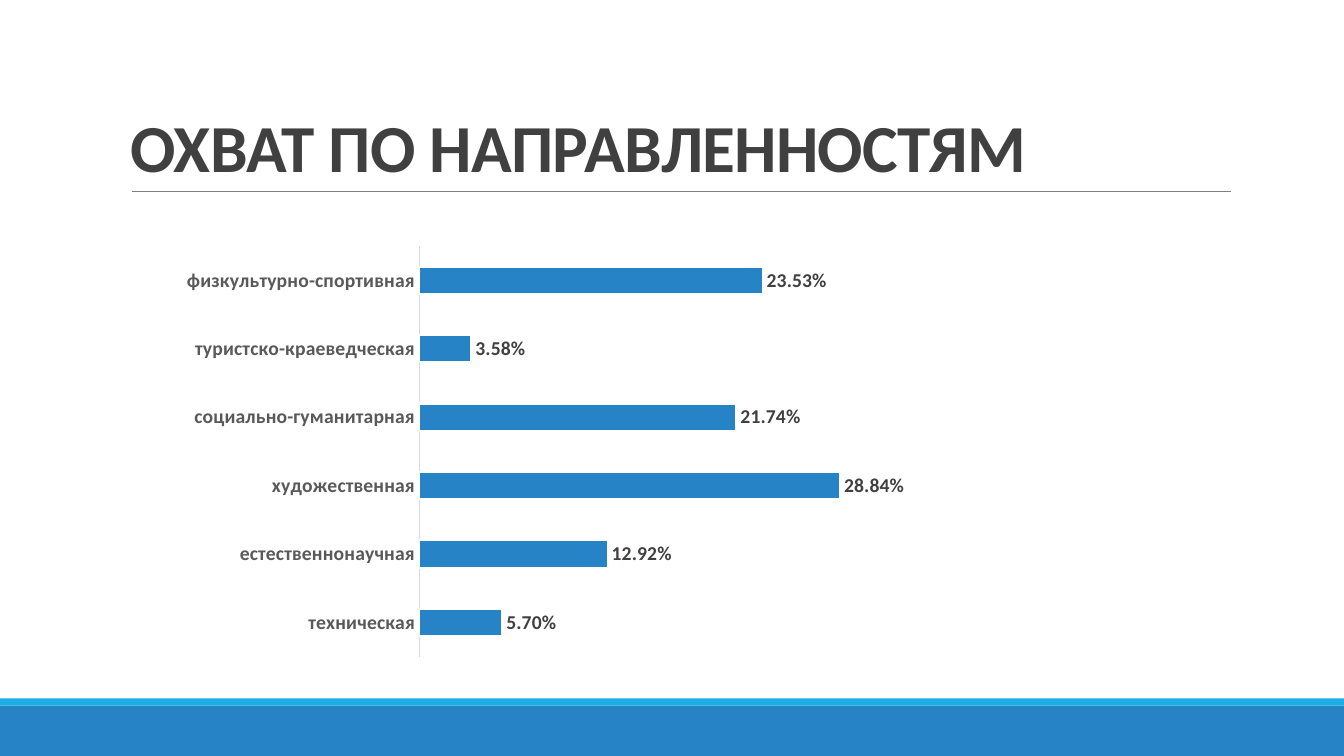
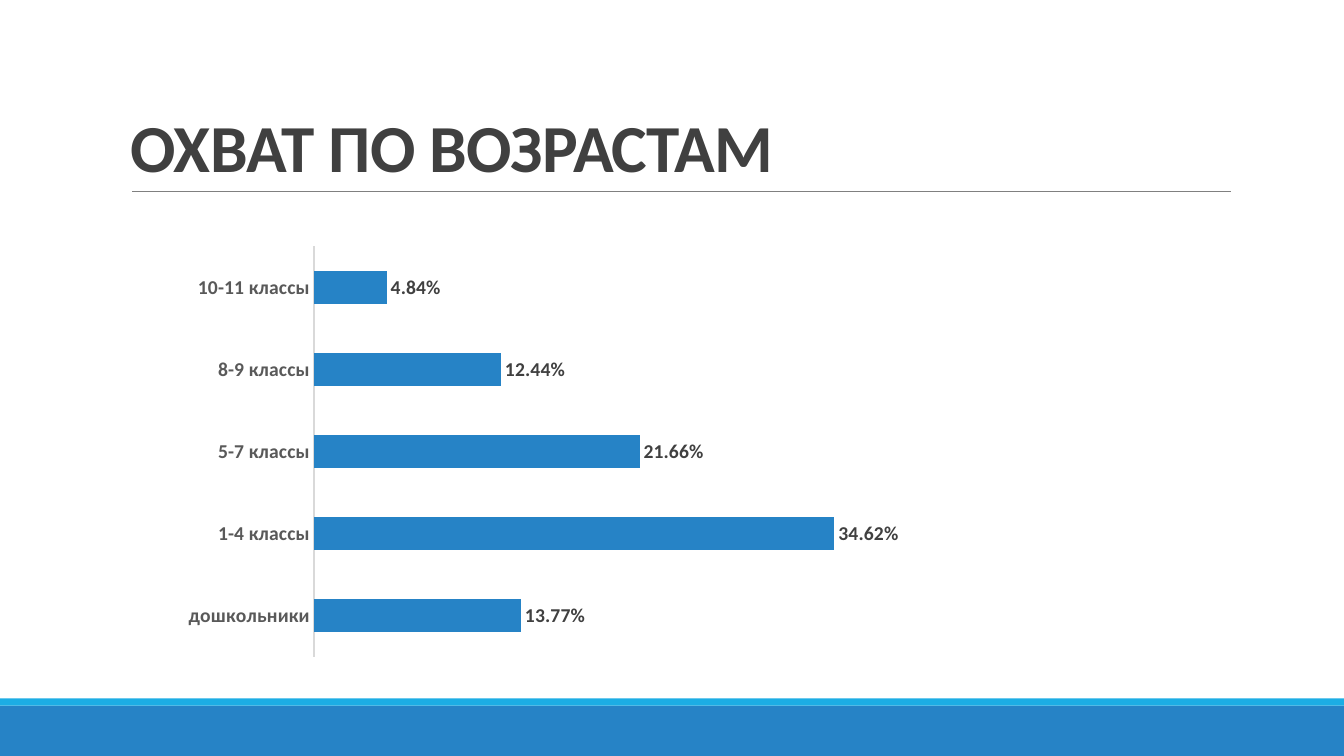
from pptx import Presentation, util as u
from pptx.chart.data import CategoryChartData
from pptx.dml.color import RGBColor
from pptx.enum import chart as charts, shapes, text
from pptx.oxml.ns import qn
from lxml import etree

Cm, Pt = u.Cm, u.Pt
WIDTH, HEIGHT = 33.87, 19.05
FONT = "Calibri"
PERCENT = "0.00%"
COLORS = {
    "bar": "2683C6",
    "stripe": "1CADE4",
    "rule": "808080",
    "dark": "404040",
    "label": "595959",
    "axis": "D9D9D9",
    "white": "FFFFFF",
}


def color(name):
    return RGBColor.from_string(COLORS[name])


class Deck:
    """Holds the shared style and the current slide."""

    def __init__(self):
        self.deck = Presentation()
        self.deck.slide_width, self.deck.slide_height = Cm(WIDTH), Cm(HEIGHT)
        self.page = None

    def new_page(self, title):
        self.page = self.deck.slides.add_slide(self.deck.slide_layouts[6])
        self.band(17.78, 1.27, "bar")
        self.band(17.6, 0.18, "stripe")
        self.rule(3.33, 31.01, 4.83)
        self.title(title)

    def style_font(self, font, size, name):
        font.name, font.size, font.bold = FONT, Pt(size), True
        font.color.rgb = color(name)

    def band(self, top, height, name):
        band = self.page.shapes.add_shape(
            shapes.MSO_SHAPE.RECTANGLE, 0, Cm(top), Cm(WIDTH), Cm(height))
        band.shadow.inherit = False
        band.fill.solid()
        band.fill.fore_color.rgb = color(name)
        band.line.fill.background()

    def rule(self, left, right, top):
        rule = self.page.shapes.add_connector(
            shapes.MSO_CONNECTOR.STRAIGHT, Cm(left), Cm(top), Cm(right), Cm(top))
        rule.line.color.rgb = color("rule")
        rule.line.width = Pt(0.5)
        etree.SubElement(rule.element.spPr, qn("a:effectLst"))

    def title(self, words):
        box = self.page.shapes.add_textbox(Cm(3.05), Cm(0.79), Cm(27.94), Cm(4.04))
        frame = box.text_frame
        frame.word_wrap = True
        frame.vertical_anchor = text.MSO_ANCHOR.BOTTOM
        para = frame.paragraphs[0]
        para.text = words
        para.line_spacing = 0.85
        self.style_font(para.font, 48, "dark")
        # Tighten the letters by half a point
        para.font._element.set("spc", "-50")

    def bar_chart(self, left, width, shares, top_value, outlined=False):
        data = CategoryChartData(number_format=PERCENT)
        data.categories = list(shares)
        data.add_series("Охват", list(shares.values()))
        chart = self.page.shapes.add_chart(
            charts.XL_CHART_TYPE.BAR_CLUSTERED,
            Cm(left), Cm(5.99), Cm(width), Cm(10.77), data).chart
        chart.has_title = chart.has_legend = False
        chart.font.name, chart.font.size = FONT, Pt(10)

        # Axes
        names = chart.category_axis
        names.major_tick_mark = charts.XL_TICK_MARK.NONE
        names.format.line.color.rgb = color("axis")
        names.format.line.width = Pt(0.75)
        self.style_font(names.tick_labels.font, 14, "label")
        values = chart.value_axis
        values.minimum_scale, values.maximum_scale = 0, top_value
        values.has_major_gridlines = values.visible = False

        # Bars
        plot = chart.plots[0]
        plot.gap_width, plot.overlap = 150, -25
        plot.vary_by_categories = False
        bars = plot.series[0].format
        bars.fill.solid()
        bars.fill.fore_color.rgb = color("bar")
        if outlined:
            bars.line.color.rgb = color("white")
            bars.line.width = Pt(1.5)

        # Value labels
        plot.has_data_labels = True
        labels = plot.data_labels
        labels.show_value = True
        labels.number_format, labels.number_format_is_linked = PERCENT, False
        labels.position = charts.XL_LABEL_POSITION.OUTSIDE_END
        self.style_font(labels.font, 14, "dark")

    def save(self):
        self.deck.save("out.pptx")


def main():
    deck = Deck()

    # Coverage by field
    deck.new_page("ОХВАТ ПО НАПРАВЛЕННОСТЯМ")
    deck.bar_chart(4.32, 19.51, {
        "техническая": 0.057,
        "естественнонаучная": 0.1292,
        "художественная": 0.2884,
        "социально-гуманитарная": 0.2174,
        "туристско-краеведческая": 0.0358,
        "физкультурно-спортивная": 0.2353,
    }, 0.35, outlined=True)

    # Coverage by age
    deck.new_page("ОХВАТ ПО ВОЗРАСТАМ")
    deck.bar_chart(4.37, 19.08, {
        "дошкольники": 0.1377,
        "1-4 классы": 0.3462,
        "5-7 классы": 0.2166,
        "8-9 классы": 0.1244,
        "10-11 классы": 0.0484,
    }, 0.4)

    deck.save()


if __name__ == "__main__":
    main()
